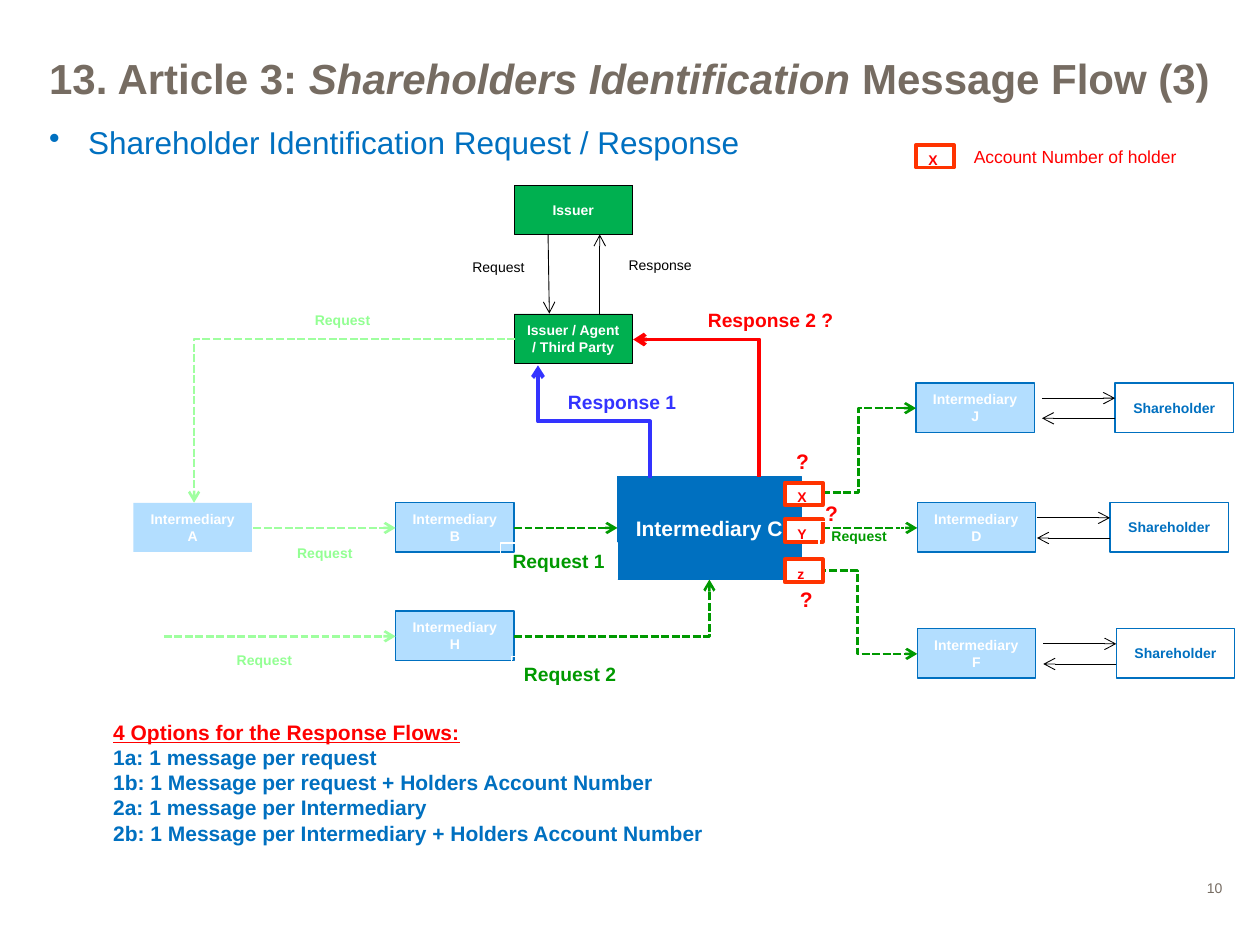
from dataclasses import dataclass

from lxml import etree
from pptx import Presentation
from pptx import util as u
from pptx.dml.color import RGBColor
from pptx.enum import dml, shapes, text
from pptx.oxml.ns import qn

COLORS = {
    "white": "FFFFFF", "black": "000000", "gray": "766C62", "blue": "0070C0",
    "pale_blue": "B3DEFF", "green": "00B050", "dark_green": "009900",
    "light_green": "9FFF9F", "label_green": "93FF93", "violet": "3333FF",
    "red": "FF0000", "orange": "FF3300",
}
BOX_WIDTH, BOX_HEIGHT = 0.94, 0.39
SYS_DASH = dml.MSO_LINE.SQUARE_DOT
SYS_DOT = dml.MSO_LINE.ROUND_DOT


@dataclass
class Node:
    label: str
    left: float
    top: float
    fill: str = "pale_blue"
    line: str | None = "blue"
    color: str = "white"
    width: float = BOX_WIDTH
    height: float = BOX_HEIGHT
    size: float = 8
    weight: float = 0.75
    dash: dml.MSO_LINE | None = None


@dataclass
class Arrow:
    start: tuple[float, float]
    end: tuple[float, float]
    color: str = "black"
    weight: float = 0.5
    dashed: bool = False
    bends: int = 0
    rotation: int = 0


@dataclass
class Label:
    words: str
    left: float
    top: float
    width: float
    height: float
    color: str
    size: float = 8
    bold: bool = True
    wrap: bool = False
    framed: bool = False


def rgb(name: str) -> RGBColor:
    return RGBColor.from_string(COLORS[name])


def write(para, words: str, *, size: float, color: str, bold=False, italic=False, underline=False):
    span = para.add_run()
    span.text = words
    font = span.font
    font.name, font.size, font.color.rgb = "Arial", u.Pt(size), rgb(color)
    font.bold, font.italic, font.underline = bold, italic, underline


def set_line(line, color: str | None, weight: float, dash=None) -> None:
    if color is None:
        line.fill.background()
        return
    line.color.rgb, line.width = rgb(color), u.Pt(weight)
    if dash is not None:
        line.dash_style = dash


def add_rectangle(page, left: float, top: float, width: float, height: float):
    box = page.shapes.add_shape(shapes.MSO_SHAPE.RECTANGLE, *map(u.Inches, (left, top, width, height)))
    box.shadow.inherit = False
    return box


def add_text_box(page, left: float, top: float, width: float, height: float, margins=(0.1, 0.05)):
    box = page.shapes.add_textbox(*map(u.Inches, (left, top, width, height)))
    frame = box.text_frame
    frame.word_wrap = True
    frame.margin_left = frame.margin_right = u.Inches(margins[0])
    frame.margin_top = frame.margin_bottom = u.Inches(margins[1])
    return box


def add_node(page, node: Node, align=text.PP_ALIGN.CENTER, anchor=text.MSO_ANCHOR.MIDDLE) -> None:
    box = add_rectangle(page, node.left, node.top, node.width, node.height)
    box.fill.solid()
    box.fill.fore_color.rgb = rgb(node.fill)
    set_line(box.line, node.line, node.weight, node.dash)
    box.text_frame.vertical_anchor = anchor
    para = box.text_frame.paragraphs[0]
    para.alignment = align
    write(para, node.label, size=node.size, color=node.color, bold=True)


def add_arrow(page, arrow: Arrow) -> None:
    kind = shapes.MSO_CONNECTOR.ELBOW if arrow.bends else shapes.MSO_CONNECTOR.STRAIGHT
    connector = page.shapes.add_connector(kind, *map(u.Inches, arrow.start + arrow.end))
    set_line(connector.line, arrow.color, arrow.weight, SYS_DASH if arrow.dashed else None)
    properties = connector._element.spPr
    etree.SubElement(properties.find(qn("a:ln")), qn("a:tailEnd"), type="arrow")
    etree.SubElement(properties, qn("a:effectLst"))
    if arrow.bends == 1:
        properties.find(qn("a:prstGeom")).set("prst", "bentConnector2")
    if arrow.rotation:
        properties.find(qn("a:xfrm")).set("rot", str(arrow.rotation * 60000))


def add_label(page, label: Label) -> None:
    make = add_rectangle if label.framed else add_text_box
    box = make(page, label.left, label.top, label.width, label.height)
    if label.framed:
        box.fill.background()
        set_line(box.line, "white", 0.75)
    frame = box.text_frame
    frame.word_wrap = label.wrap
    frame.auto_size = text.MSO_AUTO_SIZE.SHAPE_TO_FIT_TEXT
    frame.vertical_anchor = text.MSO_ANCHOR.TOP
    para = frame.paragraphs[0]
    para.alignment = text.PP_ALIGN.LEFT
    write(para, label.words, size=label.size, color=label.color, bold=label.bold)


def add_headings(page) -> None:
    para = add_text_box(page, 9.09, 6.93, 0.71, 0.28).text_frame.paragraphs[0]
    para.alignment = text.PP_ALIGN.RIGHT
    write(para, "10", size=8, color="gray")

    para = add_text_box(page, 0.27, 0.36, 9.46, 0.47, (0.12, 0.06)).text_frame.paragraphs[0]
    for words, italic in (("13. Article 3: ", False), ("Shareholders Identification ", True),
                          ("Message Flow (3)", False)):
        write(para, words, size=24, color="gray", bold=True, italic=italic)

    para = add_text_box(page, 0.27, 0.92, 9.46, 0.47, (0.12, 0.06)).text_frame.paragraphs[0]
    properties = para._p.get_or_add_pPr()
    properties.set("marL", str(u.Inches(0.31)))
    properties.set("indent", str(u.Inches(-0.31)))
    etree.SubElement(properties, qn("a:buChar"), char="•")
    write(para, "Shareholder Identification Request / Response", size=18, color="blue")


def add_options(page) -> None:
    frame = add_text_box(page, 0.8, 5.66, 6.48, 1.11).text_frame
    write(frame.paragraphs[0], "4 Options for the Response Flows:", size=12, color="red",
          bold=True, underline=True)
    for option in ("1a: 1 message per request",
                   "1b: 1 Message per request + Holders Account Number",
                   "2a: 1 message per Intermediary",
                   "2b: 1 Message per Intermediary + Holders Account Number"):
        write(frame.add_paragraph(), option, size=12, color="blue", bold=True)


NODES = [
    Node("Intermediary C", 4.9, 3.78, "blue", width=1.46, height=0.82, size=12),
    Node("Intermediary A", 1.06, 3.99, line=None),
    Node("Intermediary B", 3.14, 3.99),
    Node("Intermediary H", 3.14, 4.85),
    Node("Intermediary J", 7.27, 3.04),
    Node("Intermediary D", 7.28, 3.99),
    Node("Intermediary F", 7.28, 4.99),
    Node("Issuer / Agent / Third Party", 4.08, 2.49, "green", "black", weight=0.25),
    Node("Issuer", 4.08, 1.47, "green", "black", weight=0.25, dash=SYS_DOT),
]
SHAREHOLDERS = [(8.85, 3.04), (8.81, 3.99), (8.86, 4.99)]
# Rotated elbows give the ends of their frame before it is turned
ARROWS = [
    Arrow((1.54, 3.99), (4.09, 2.69), "light_green", 1.5, True, bends=1, rotation=180),
    Arrow((2.01, 4.19), (3.14, 4.19), "light_green", 1.5, True),
    Arrow((1.3, 5.05), (3.14, 5.05), "light_green", 1.5, True),
    Arrow((4.08, 4.19), (4.9, 4.19), "dark_green", 1.5, True),
    Arrow((6.36, 4.19), (7.28, 4.19), "dark_green", 1.5, True),
    Arrow((4.08, 5.05), (5.63, 4.6), "dark_green", 1.5, True, bends=1),
    Arrow((6.33, 4.53), (7.28, 5.19), "dark_green", 1.5, True, bends=2),
    Arrow((6.36, 3.91), (7.27, 3.24), "dark_green", 1.5, True, bends=2),
    Arrow((4.27, 3.79), (5.16, 2.9), "violet", 2.25, bends=2, rotation=270),
    Arrow((4.98, 3.74), (6.07, 2.74), "red", 2.25, bends=1, rotation=270),
    Arrow((4.35, 1.86), (4.36, 2.49)),
    Arrow((4.76, 2.49), (4.76, 1.86)),
]
LABELS = [
    Label("Request", 2.4, 2.42, 0.65, 0.24, "label_green"),
    Label("Request", 6.5, 4.14, 0.65, 0.24, "dark_green", framed=True),
    Label("Request", 2.26, 4.27, 0.65, 0.24, "label_green", framed=True),
    Label("Request", 1.78, 5.12, 0.65, 0.24, "label_green", framed=True),
    Label("Request 2", 4.06, 5.21, 1.1, 0.29, "dark_green", 11, wrap=True, framed=True),
    Label("Request 1", 3.97, 4.31, 0.93, 0.29, "dark_green", 11, wrap=True, framed=True),
    Label("Request", 3.65, 2, 0.62, 0.24, "black", bold=False),
    Label("Response", 4.89, 1.99, 0.71, 0.24, "black", bold=False),
    Label("Response 1", 4.41, 3.05, 1.07, 0.29, "violet", 11),
    Label("Response 2 ?", 5.52, 2.4, 1.44, 0.29, "red", 11, wrap=True),
    Label("Account Number of holder", 7.63, 1.11, 1.82, 0.27, "red", 10, bold=False),
    *(Label("?", left, top, 0.31, 0.3, "red", 12)
      for left, top in ((6.22, 3.51), (6.25, 4.61), (6.45, 3.92))),
]
ACCOUNTS = [("X", 6.23, 3.83), ("Y", 6.23, 4.12), ("z", 6.23, 4.44), ("X", 7.27, 1.15)]


def main() -> None:
    deck = Presentation()
    deck.slide_width, deck.slide_height = u.Inches(10), u.Inches(7.5)
    page = deck.slides.add_slide(deck.slide_layouts[6])
    add_headings(page)

    # Parties and the flows between them
    for node in NODES:
        add_node(page, node)
    for left, top in SHAREHOLDERS:
        add_node(page, Node("Shareholder", left, top, "white", color="blue"))
        add_arrow(page, Arrow((left - 0.58, top + 0.12), (left, top + 0.12)))
        add_arrow(page, Arrow((left, top + 0.28), (left - 0.58, top + 0.28)))
    for arrow in ARROWS:
        add_arrow(page, arrow)

    # Account numbers, captions and options
    for name, left, top in ACCOUNTS:
        account = Node(name, left, top, "white", "orange", "red", 0.3, 0.18, weight=2.25)
        add_node(page, account, text.PP_ALIGN.LEFT, text.MSO_ANCHOR.TOP)
    for label in LABELS:
        add_label(page, label)
    add_options(page)
    deck.save("out.pptx")


if __name__ == "__main__":
    main()
